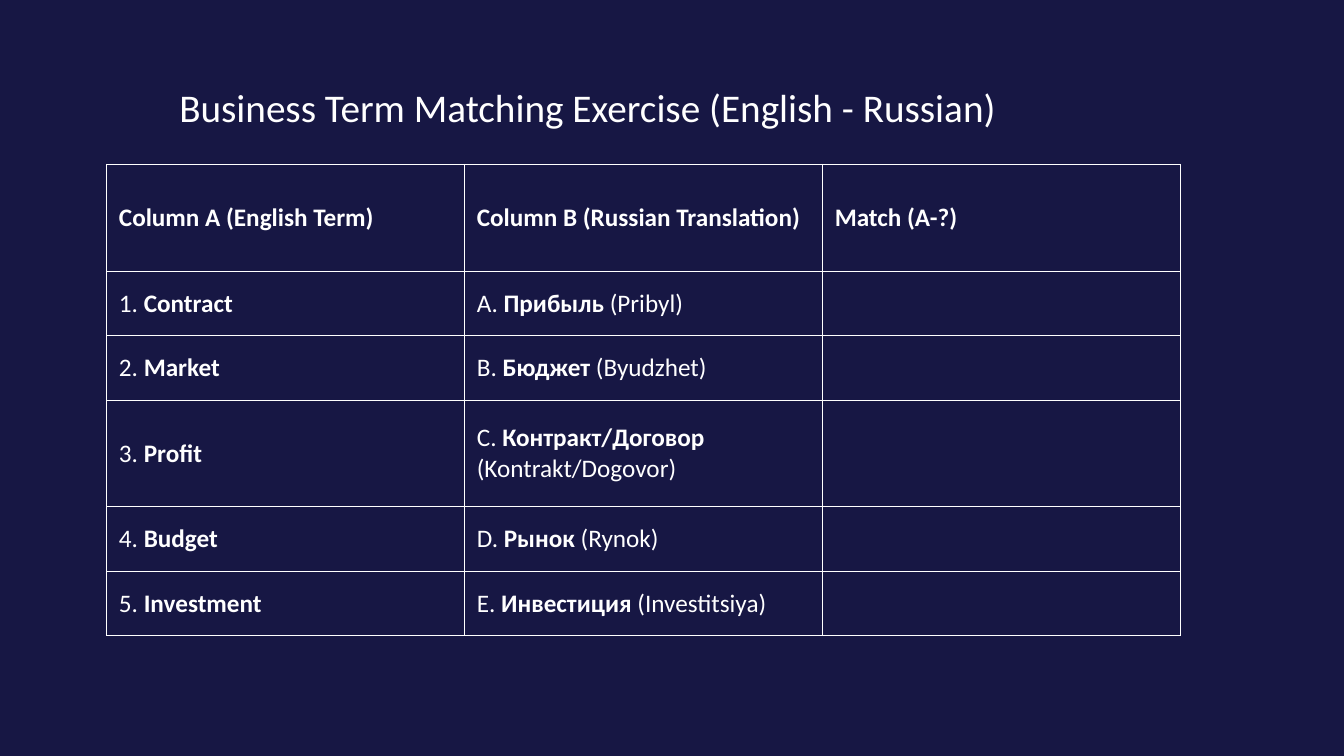
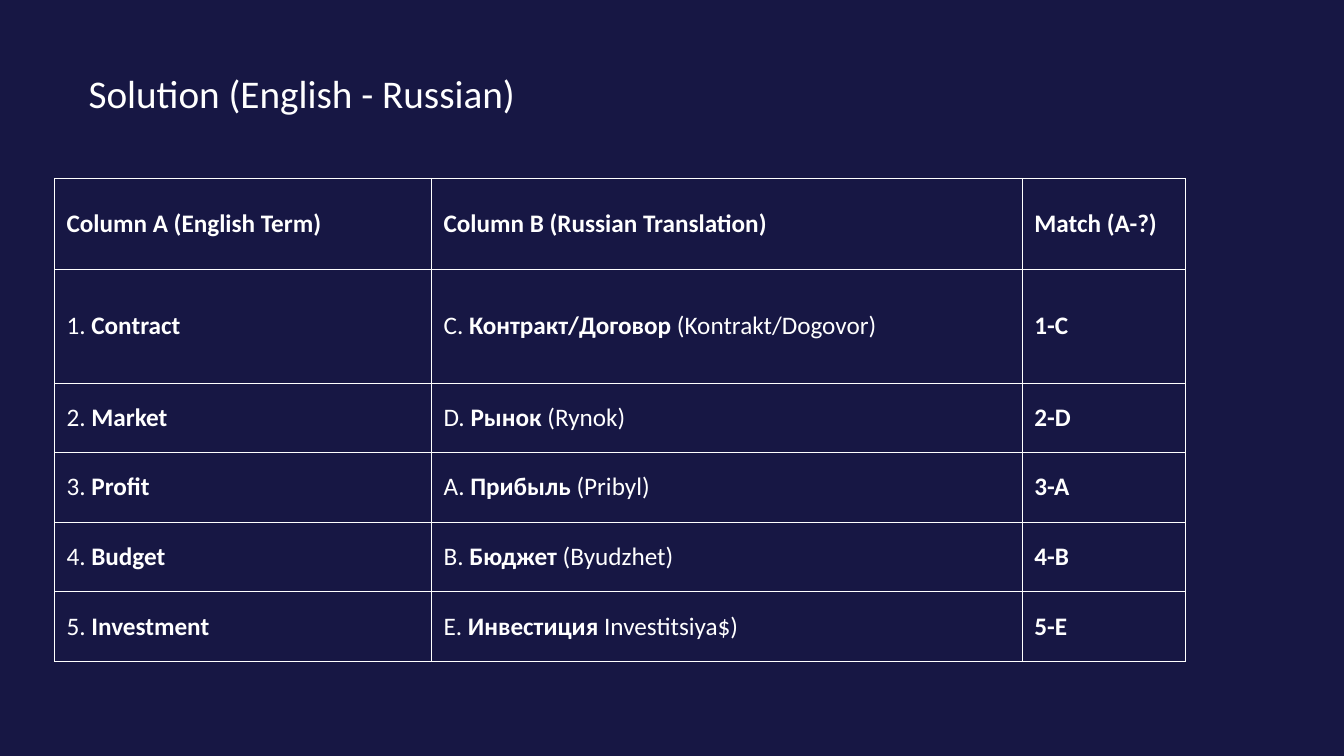
from lxml import etree
from pptx import Presentation
from pptx.dml.color import RGBColor
from pptx.enum import text
from pptx.oxml import ns
from pptx.util import Inches, Pt

COLORS = {"navy": "171744", "white": "FFFFFF"}
FONT = "Calibri"
HEADER = ["*Column A (English Term)*", "*Column B (Russian Translation)*", "*Match (A-?)*"]
TERMS = ["Contract", "Market", "Profit", "Budget", "Investment"]

SLIDES = [
    {
        "title": "Business Term Matching Exercise (English - Russian)",
        "title_at": (1.68, 0.78),
        "table_at": (1.06, 1.63),
        "cols": [3.55, 3.55, 3.55],
        "rows": [1.06, 0.64, 0.64, 1.06, 0.64, 0.64],
        "translations": [
            "A. *Прибыль* (Pribyl)",
            "B. *Бюджет* (Byudzhet)",
            "C. *Контракт/Договор* (Kontrakt/Dogovor)",
            "D. *Рынок* (Rynok)",
            "E. *Инвестиция* (Investitsiya)",
        ],
        "matches": [""] * 5,
    },
    {
        "title": "Solution (English - Russian)",
        "title_at": (0.78, 0.64),
        "table_at": (0.54, 1.77),
        "cols": [3.74, 5.86, 1.62],
        "rows": [0.9, 1.13, 0.69, 0.69, 0.69, 0.69],
        "translations": [
            "C. *Контракт/Договор* (Kontrakt/Dogovor)",
            "D. *Рынок* (Rynok)",
            "A. *Прибыль* (Pribyl)",
            "B. *Бюджет* (Byudzhet)",
            "E. *Инвестиция* Investitsiya$)",
        ],
        "matches": ["*1-C*", "*2-D*", "*3-A*", "*4-B*", "*5-E*"],
    },
]


def write(p, marked, size):
    for i, part in enumerate(marked.split("*")):
        if part:
            r = p.add_run()
            r.text = part
            r.font.name = FONT
            r.font.size = Pt(size)
            r.font.bold = i % 2 == 1
            r.font.color.rgb = RGBColor.from_string(COLORS["white"])


def add_borders(cell, color, width):
    tc_pr = cell._tc.get_or_add_tcPr()
    for side in ("lnL", "lnR", "lnT", "lnB"):
        ln = etree.SubElement(tc_pr, ns.qn(f"a:{side}"), w=str(Pt(width)))
        fill = etree.SubElement(ln, ns.qn("a:solidFill"))
        etree.SubElement(fill, ns.qn("a:srgbClr"), val=color)


prs = Presentation()
prs.slide_width = Inches(13.33)
prs.slide_height = Inches(7.5)
bg = prs.slide_master.background.fill
bg.solid()
bg.fore_color.rgb = RGBColor.from_string(COLORS["navy"])

for content in SLIDES:
    s = prs.slides.add_slide(prs.slide_layouts[6])

    left, top = content["title_at"]
    sp = s.shapes.add_textbox(Inches(left), Inches(top), Inches(10.77), Inches(0.57))
    tf = sp.text_frame
    tf.word_wrap = True
    tf.auto_size = text.MSO_AUTO_SIZE.SHAPE_TO_FIT_TEXT
    write(tf.paragraphs[0], content["title"], 28)

    terms = [f"{n}. *{term}*" for n, term in enumerate(TERMS, 1)]
    rows = [HEADER, *zip(terms, content["translations"], content["matches"])]
    left, top = content["table_at"]
    table = s.shapes.add_table(
        len(rows), len(HEADER), Inches(left), Inches(top),
        Inches(sum(content["cols"])), Inches(sum(content["rows"])),
    ).table
    table.first_row = False
    table.horz_banding = False
    for col, width in zip(table.columns, content["cols"]):
        col.width = Inches(width)
    for row, height, values in zip(table.rows, content["rows"], rows):
        row.height = Inches(height)
        for cell, value in zip(row.cells, values):
            add_borders(cell, COLORS["white"], 0.75)
            cell.fill.background()
            cell.vertical_anchor = text.MSO_ANCHOR.MIDDLE
            cell.margin_left = cell.margin_right = Inches(0.12)
            cell.margin_top = cell.margin_bottom = Inches(0.08)
            write(cell.text_frame.paragraphs[0], value, 18)

prs.save("out.pptx")
